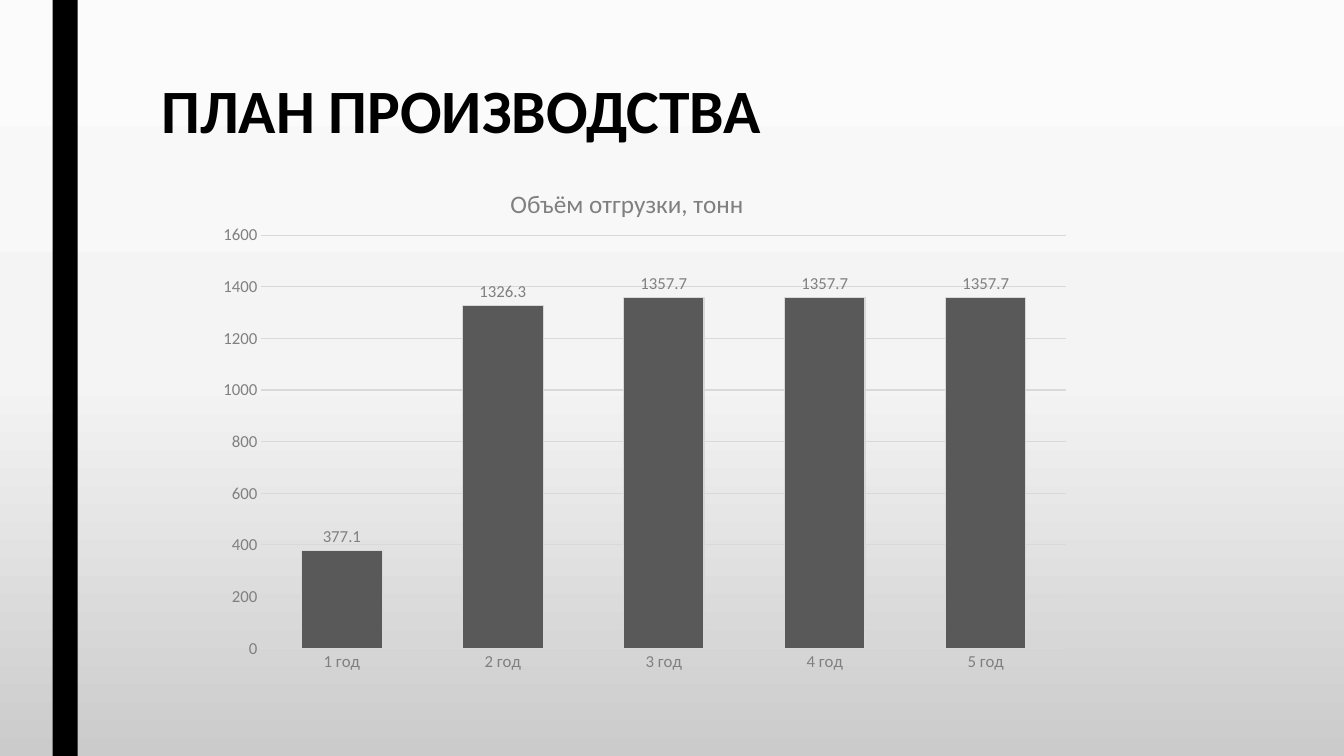
import copy

import lxml.etree
import pptx
import pptx.chart.data
import pptx.dml.color
import pptx.enum.chart
import pptx.enum.shapes
import pptx.enum.text
import pptx.oxml
import pptx.oxml.ns
import pptx.util

Pt = pptx.util.Pt
RGBColor = pptx.dml.color.RGBColor
qn = pptx.oxml.ns.qn

BLACK = RGBColor(0x00, 0x00, 0x00)
BAR_GRAY = RGBColor(0x59, 0x59, 0x59)
BAR_EDGE = RGBColor(0xD8, 0xD8, 0xD8)
TEXT_GRAY = RGBColor(0x80, 0x80, 0x80)
GRID_GRAY = RGBColor(0xD9, 0xD9, 0xD9)
BACKGROUND_STOPS = (
    (0, RGBColor(0xFB, 0xFB, 0xFB)),
    (0.5, RGBColor(0xF4, 0xF4, 0xF4)),
    (1, RGBColor(0xCB, 0xCB, 0xCB)),
)


class SlideBuilder:
    """Hold the style and the current slide, and add its elements."""

    font_name = "Calibri"

    def __init__(self, presentation):
        self.slide = presentation.slides.add_slide(presentation.slide_layouts[5])

    def style_font(self, font, size, color, bold=False):
        font.name = self.font_name
        font.size = Pt(size)
        font.bold = bold
        font.color.rgb = color

    def style_line(self, line, color):
        line.color.rgb = color
        line.width = Pt(0.75)

    def background(self, stops):
        fill = self.slide.background.fill
        fill.gradient()
        fill.gradient_angle = 270
        stop_list = fill._fill._gradFill.find(qn("a:gsLst"))
        while len(stop_list) < len(stops):
            stop_list.append(copy.deepcopy(stop_list[0]))
        for gradient_stop, (position, color) in zip(fill.gradient_stops, stops):
            gradient_stop.position = position
            gradient_stop.color.rgb = color

    def bar(self, left, top, width, height, color):
        shape = self.slide.shapes.add_shape(
            pptx.enum.shapes.MSO_SHAPE.RECTANGLE,
            Pt(left), Pt(top), Pt(width), Pt(height))
        shape.shadow.inherit = False
        shape.fill.solid()
        shape.fill.fore_color.rgb = color
        shape.line.fill.background()

    def title(self, text, left, top, width, height):
        shape = self.slide.shapes.title
        shape.left, shape.top = Pt(left), Pt(top)
        shape.width, shape.height = Pt(width), Pt(height)
        frame = shape.text_frame
        frame.word_wrap = True
        frame.auto_size = pptx.enum.text.MSO_AUTO_SIZE.NONE
        frame.vertical_anchor = pptx.enum.text.MSO_ANCHOR.TOP
        paragraph = frame.paragraphs[0]
        paragraph.alignment = pptx.enum.text.PP_ALIGN.LEFT
        paragraph.line_spacing = 0.89
        run = paragraph.add_run()
        run.text = text
        self.style_font(run.font, 44, BLACK, bold=True)

    def column_chart(self, title, categories, values, left, top, width, height):
        data = pptx.chart.data.CategoryChartData()
        data.categories = categories
        data.add_series(title, values)
        chart = self.slide.shapes.add_chart(
            pptx.enum.chart.XL_CHART_TYPE.COLUMN_CLUSTERED,
            Pt(left), Pt(top), Pt(width), Pt(height), data).chart
        self.style_font(chart.font, 10, BLACK)
        chart.has_legend = False
        chart.has_title = True
        run = chart.chart_title.text_frame.paragraphs[0].add_run()
        run.text = title
        self.style_font(run.font, 18, TEXT_GRAY)

        plot = chart.plots[0]
        plot.vary_by_categories = False
        plot.gap_width = 100
        plot.overlap = -24
        series = plot.series[0]
        series.format.fill.solid()
        series.format.fill.fore_color.rgb = BAR_GRAY
        self.style_line(series.format.line, BAR_EDGE)
        labels = series.data_labels
        labels.show_value = True
        labels.position = pptx.enum.chart.XL_LABEL_POSITION.OUTSIDE_END
        self.style_font(labels.font, 12, TEXT_GRAY)

        for axis in (chart.category_axis, chart.value_axis):
            axis.major_tick_mark = pptx.enum.chart.XL_TICK_MARK.NONE
            axis.minor_tick_mark = pptx.enum.chart.XL_TICK_MARK.NONE
            self.style_font(axis.tick_labels.font, 12, TEXT_GRAY)
        self.style_line(chart.category_axis.format.line, GRID_GRAY)
        value_axis = chart.value_axis
        value_axis.minimum_scale = 0
        value_axis.maximum_scale = 1600
        value_axis.major_unit = 200
        value_axis.format.line.fill.background()
        value_axis.has_major_gridlines = True
        self.style_line(value_axis.major_gridlines.format.line, GRID_GRAY)
        self.plot_layout(chart, x=0.084, y=0.133, w=0.916, h=0.802)

    def plot_layout(self, chart, **fractions):
        plot_area = chart._chartSpace.find(".//" + qn("c:plotArea"))
        for old_layout in plot_area.findall(qn("c:layout")):
            plot_area.remove(old_layout)
        layout = pptx.oxml.parse_xml(
            "<c:layout %s><c:manualLayout/></c:layout>" % pptx.oxml.ns.nsdecls("c"))
        settings = {"layoutTarget": "inner", "xMode": "edge", "yMode": "edge", **fractions}
        for name, value in settings.items():
            lxml.etree.SubElement(layout[0], qn("c:" + name)).set("val", str(value))
        plot_area.insert(0, layout)


def main():
    presentation = pptx.Presentation()
    presentation.slide_width = Pt(960)
    presentation.slide_height = Pt(540)
    builder = SlideBuilder(presentation)
    builder.background(BACKGROUND_STOPS)
    builder.bar(37.5, 0, 18, 540, BLACK)
    builder.title("ПЛАН ПРОИЗВОДСТВА", 108, 54, 756, 116.64)
    builder.column_chart(
        "Объём отгрузки, тонн",
        [f"{year} год" for year in range(1, 6)],
        (377.1, 1326.3, 1357.7, 1357.7, 1357.7),
        134, 119, 628, 368)
    presentation.save("out.pptx")


if __name__ == "__main__":
    main()
